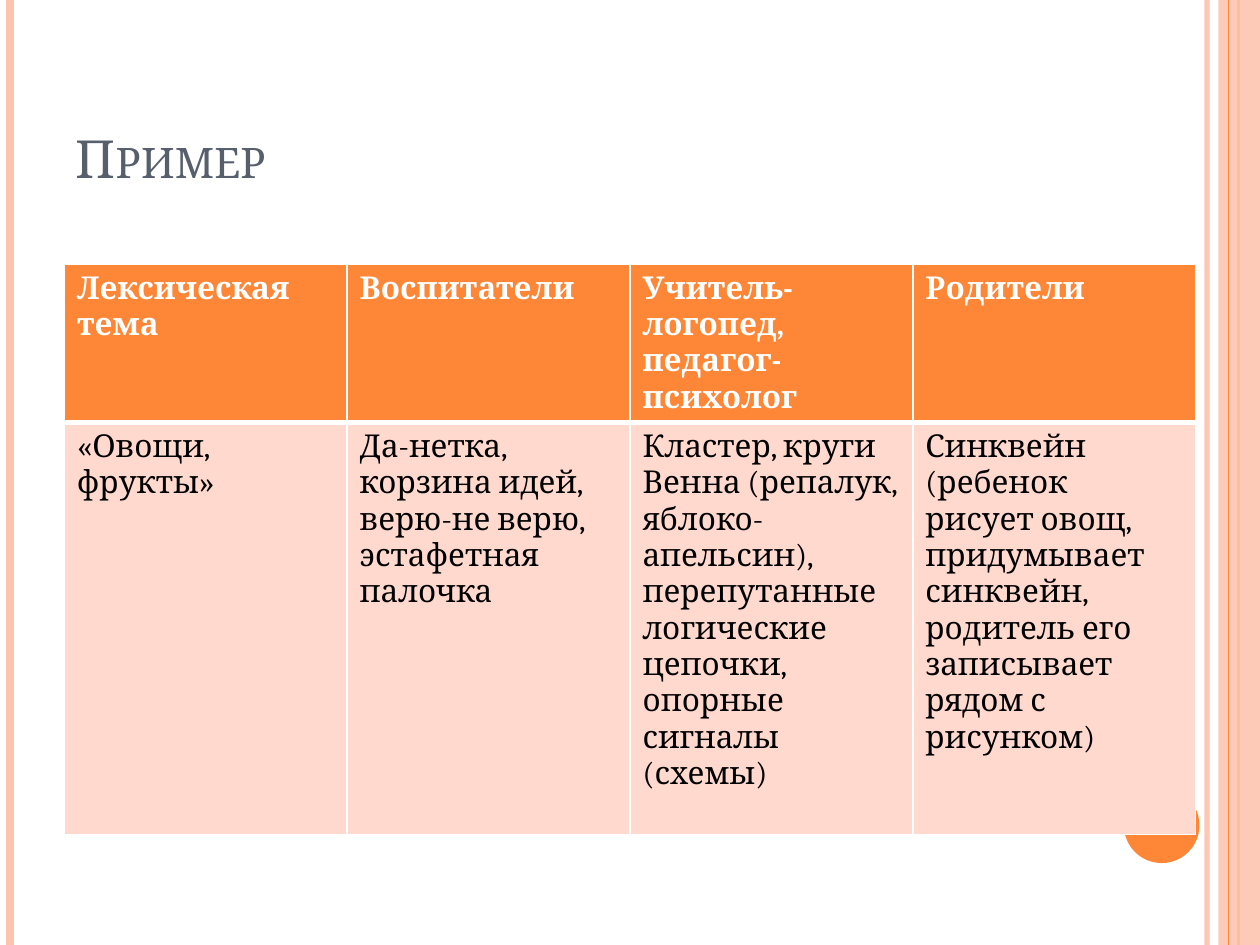
"""Build the slide with an example table of techniques for one lexical topic."""
from lxml import etree
from pptx import Presentation
from pptx.dml.color import RGBColor
from pptx.enum.shapes import MSO_CONNECTOR, MSO_SHAPE
from pptx.enum.text import MSO_ANCHOR, PP_ALIGN
from pptx.oxml.ns import qn
from pptx.util import Inches, Pt

STRAIGHT = MSO_CONNECTOR.STRAIGHT
RECTANGLE, OVAL = MSO_SHAPE.RECTANGLE, MSO_SHAPE.OVAL
BOTTOM, LEFT = MSO_ANCHOR.BOTTOM, PP_ALIGN.LEFT
FONT = "Cambria"
COLORS = {
    "orange": "FE8637",
    "peach": "FEC3AE",
    "cell": "FFD9CE",
    "title": "575F6D",
    "white": "FFFFFF",
    "black": "000000",
}


def paint(fill, color, opacity=100):
    fill.solid()
    fill.fore_color.rgb = RGBColor.from_string(COLORS[color])
    if opacity < 100:
        srgb = fill._xPr.find(qn("a:solidFill")).find(qn("a:srgbClr"))
        etree.SubElement(srgb, qn("a:alpha"), val=str(opacity * 1000))


def add_text(paragraph, text, size, color, bold=False):
    run = paragraph.add_run()
    run.text = text
    run.font.name = FONT
    run.font.size = Pt(size)
    run.font.bold = bold
    run.font.color.rgb = RGBColor.from_string(COLORS[color])
    return run


prs = Presentation()
prs.slide_width, prs.slide_height = Inches(10), Inches(7.5)
slide = prs.slides.add_slide(prs.slide_layouts[5])

STRIPES = [
    (9.58, "peach", 3, 93),
    (0.08, "peach", 4.5, 100),
    (9.83, "orange", 1.5, 100),
    (9.75, "orange", 0.75, 100),
]
PANELS = [
    (RECTANGLE, 9.67, 0, 0.33, 7.5, "peach", 87),
    (OVAL, 8.92, 6.25, 0.6, 0.6, "orange", 100),
]
stripes = []
for x, color, width, opacity in STRIPES:
    stripe = slide.shapes.add_connector(STRAIGHT, Inches(x), 0, Inches(x), Inches(7.5))
    stripe.line.width = Pt(width)
    paint(stripe.line.fill, color, opacity)
    etree.SubElement(stripe._element.spPr, qn("a:effectLst"))
    stripes.append(stripe)

for kind, left, top, width, height, color, opacity in PANELS:
    panel = slide.shapes.add_shape(
        kind, Inches(left), Inches(top), Inches(width), Inches(height)
    )
    panel.shadow.inherit = False
    panel.line.fill.background()
    paint(panel.fill, color, opacity)
    if kind == RECTANGLE:
        stripes[-1]._element.addprevious(panel._element)

title = slide.shapes.title
title.left, title.top = Inches(0.5), Inches(0.3)
title.width, title.height = Inches(8.17), Inches(1.25)
title.text_frame.vertical_anchor = BOTTOM
heading = title.text_frame.paragraphs[0]
heading.alignment = LEFT
add_text(heading, "Пример", 30, "title")._r.get_or_add_rPr().set("cap", "small")

ROWS = [
    ["Лексическая\nтема", "Воспитатели", "Учитель-логопед, педагог-психолог", "Родители"],
    [
        "«Овощи, фрукты»",
        "Да-нетка, корзина идей,\nверю-не верю, эстафетная\nпалочка",
        "Кластер, круги Венна (репалук, яблоко-апельсин),\nперепутанные логические\n"
        "цепочки, опорные сигналы\n(схемы)",
        "Синквейн (ребенок\nрисует овощ,\nпридумывает синквейн,\n"
        "родитель его записывает\nрядом с рисунком)",
    ],
]
ROW_STYLES = [
    {"height": 1.25, "fill": "orange", "text": "white", "bold": True, "top": 1, "bottom": 3},
    {"height": 3.27, "fill": "cell", "text": "black", "bold": False, "top": 3, "bottom": 1},
]
techniques = slide.shapes.add_table(
    2, 4, Inches(0.51), Inches(2.1), Inches(8.98), Inches(4.52)
).table
for column in techniques.columns:
    column.width = Inches(8.98 / 4)

for row, texts, style in zip(techniques.rows, ROWS, ROW_STYLES):
    row.height = Inches(style["height"])
    borders = {"lnL": 1, "lnR": 1, "lnT": style["top"], "lnB": style["bottom"]}
    for cell, text in zip(row.cells, texts):
        properties = cell._tc.get_or_add_tcPr()
        for side, width in borders.items():
            border = etree.SubElement(properties, qn(f"a:{side}"), w=str(Pt(width)))
            border_fill = etree.SubElement(border, qn("a:solidFill"))
            etree.SubElement(border_fill, qn("a:srgbClr"), val=COLORS["white"])
        paint(cell.fill, style["fill"])
        paragraph = cell.text_frame.paragraphs[0]
        for number, line in enumerate(text.split("\n")):
            if number:
                paragraph.add_line_break()
            add_text(paragraph, line, 18, style["text"], style["bold"])

prs.save("out.pptx")
